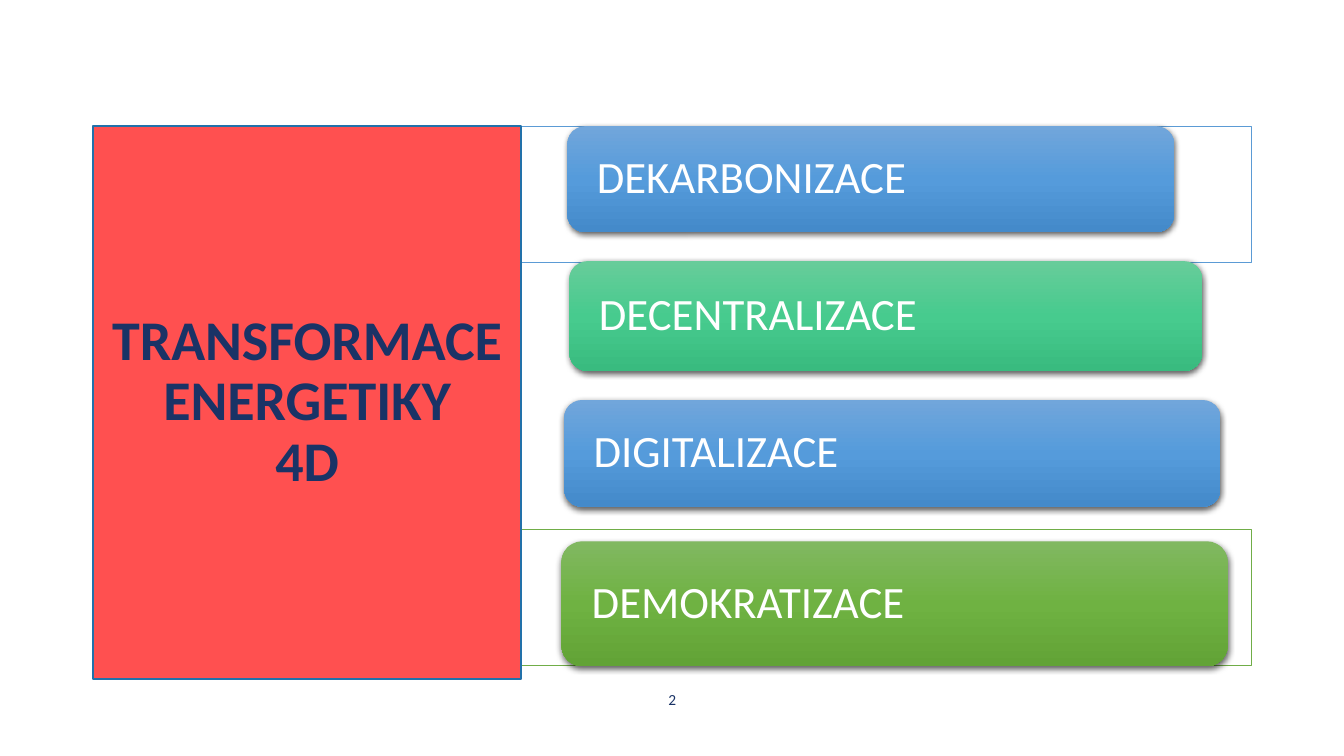
from copy import deepcopy
from typing import NamedTuple

from lxml import etree
from pptx import Presentation
from pptx import util as u
from pptx.dml.color import RGBColor
from pptx.enum import shapes, text
from pptx.oxml.ns import qn

COLORS = {
    "white": "FFFFFF",
    "red": "FF5050",
    "navy": "1A3366",
    "title_line": "2271AA",
    "blue_line": "5B9BD5",
    "green_line": "70AD47",
    "shadow": "000000",
}
GRADIENTS = {
    "blue": ("71A6DB", "559BDB", "448ACA"),
    "mint": ("67CC9A", "47CB8E", "39BB7F"),
    "green": ("81B861", "6FB242", "62A336"),
}
FONT = "Calibri"


class Area(NamedTuple):
    left: float
    top: float
    width: float
    height: float


class Frame(NamedTuple):
    area: Area
    line: str


class Bar(NamedTuple):
    label: str
    area: Area
    gradient: str


FRAMES = [
    Frame(Area(13.13, 3.18, 18.41, 3.43), "blue_line"),
    Frame(Area(13.13, 13.34, 18.41, 3.43), "green_line"),
]
BARS = [
    Bar("DEKARBONIZACE", Area(14.3, 3.18, 15.29, 2.67), "blue"),
    Bar("DECENTRALIZACE", Area(14.35, 6.58, 15.95, 2.77), "mint"),
    Bar("DIGITALIZACE", Area(14.22, 10.08, 16.54, 2.69), "blue"),
    Bar("DEMOKRATIZACE", Area(14.15, 13.64, 16.79, 3.15), "green"),
]
TITLE = Area(2.34, 3.18, 10.8, 13.94)
NUMBER = Area(13.13, 17.12, 7.62, 1.02)


def rgb(name: str) -> RGBColor:
    return RGBColor.from_string(COLORS[name])


def add_box(page, kind, area: Area):
    box = page.shapes.add_shape(kind, *map(u.Cm, area))
    box.shadow.inherit = False
    return box


def fill_and_outline(box, fill: str, line: str, points: float) -> None:
    box.fill.solid()
    box.fill.fore_color.rgb = rgb(fill)
    box.line.color.rgb = rgb(line)
    box.line.width = u.Pt(points)


def write(box, lines: list[str], size: float, color: str, align,
          bold: bool = False, spacing: float = 0.9) -> None:
    frame = box.text_frame
    frame.word_wrap = True
    frame.vertical_anchor = text.MSO_ANCHOR.MIDDLE
    para = frame.paragraphs[0]
    para.alignment = align
    para.line_spacing = spacing
    for index, line in enumerate(lines):
        if index:
            para.add_line_break()
        span = para.add_run()
        span.text = line
        span.font.name = FONT
        span.font.size = u.Pt(size)
        span.font.bold = bold
        span.font.color.rgb = rgb(color)


def fill_gradient(box, colors: tuple[str, str, str]) -> None:
    """Fill from top to bottom with three evenly spaced stops."""
    box.fill.gradient()
    box.fill.gradient_angle = 270
    stop_list = box._element.spPr.find(".//" + qn("a:gsLst"))
    stop_list.insert(1, deepcopy(stop_list[0]))
    for index, (stop, color) in enumerate(zip(box.fill.gradient_stops, colors)):
        stop.position = index / 2
        stop.color.rgb = RGBColor.from_string(color)


def add_shadow(box) -> None:
    effects = box._element.spPr.find(qn("a:effectLst"))
    shadow = etree.SubElement(
        effects, qn("a:outerShdw"), blurRad=str(u.Pt(4.5)), dist=str(u.Pt(1.5)),
        dir="5400000", algn="ctr", rotWithShape="0")
    color = etree.SubElement(shadow, qn("a:srgbClr"), val=COLORS["shadow"])
    etree.SubElement(color, qn("a:alpha"), val="63000")


def draw_frame(page, frame: Frame) -> None:
    box = add_box(page, shapes.MSO_SHAPE.RECTANGLE, frame.area)
    fill_and_outline(box, "white", frame.line, 0.5)
    color = box._element.spPr.find(qn("a:solidFill"))[0]
    etree.SubElement(color, qn("a:alpha"), val="90000")


def draw_bar(page, bar: Bar) -> None:
    box = add_box(page, shapes.MSO_SHAPE.ROUNDED_RECTANGLE, bar.area)
    fill_gradient(box, GRADIENTS[bar.gradient])
    box.line.fill.background()
    add_shadow(box)
    frame = box.text_frame
    frame.margin_left = frame.margin_right = u.Cm(0.61)
    frame.margin_top = frame.margin_bottom = 0
    write(box, [bar.label], 32, "white", text.PP_ALIGN.LEFT)


def draw_title(page) -> None:
    box = add_box(page, shapes.MSO_SHAPE.RECTANGLE, TITLE)
    fill_and_outline(box, "red", "title_line", 1.5)
    write(box, ["TRANSFORMACE ENERGETIKY", "4D"], 40, "navy",
          text.PP_ALIGN.CENTER, bold=True)


def draw_page_number(page) -> None:
    box = page.shapes.add_textbox(*map(u.Cm, NUMBER))
    write(box, ["2"], 11, "navy", text.PP_ALIGN.CENTER, spacing=1.0)


def main() -> None:
    deck = Presentation()
    deck.slide_width, deck.slide_height = u.Cm(33.87), u.Cm(19.05)
    page = deck.slides.add_slide(deck.slide_layouts[6])
    for frame in FRAMES:
        draw_frame(page, frame)
    for bar in BARS:
        draw_bar(page, bar)
    draw_title(page)
    draw_page_number(page)
    deck.save("out.pptx")


if __name__ == "__main__":
    main()
